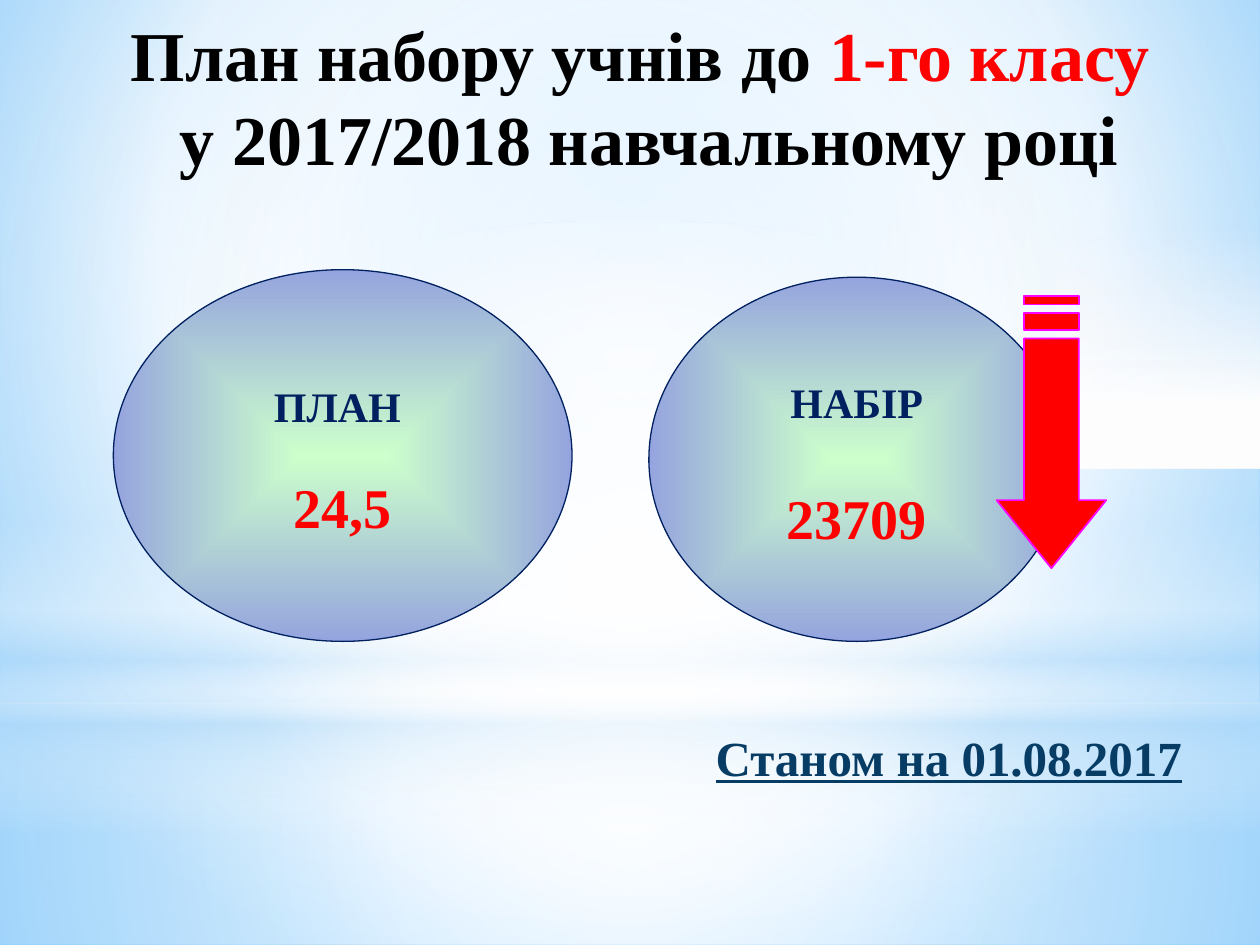
from dataclasses import dataclass

from lxml.etree import SubElement
from pptx import Presentation
from pptx.dml.color import RGBColor
from pptx.enum.shapes import MSO_SHAPE
from pptx.enum.text import MSO_ANCHOR, PP_ALIGN
from pptx.oxml.ns import qn
from pptx.util import Inches, Pt


@dataclass(frozen=True)
class Theme:
    font: str = "Times New Roman"
    black: str = "000000"
    red: str = "FF0000"
    magenta: str = "FF00FF"
    navy: str = "002060"
    date_blue: str = "073C65"
    white: str = "FFFFFF"
    pale_blue: str = "B4DCFA"
    sky: str = "9ED5FF"
    deep_sky: str = "5BB9FF"
    mist: str = "F6F7FC"
    mint: str = "CCFFCC"
    lavender: str = "95A4DE"
    title_size: int = 40
    value_size: int = 32
    date_size: int = 28
    label_size: int = 24


THEME = Theme()
CENTRE = (50, 50, 50, 50)


def set_gradient(fill, properties, stops, kind=None, focus=CENTRE):
    """Stops are (position, colour, opacity) in percent; no kind means a vertical blend."""
    fill.solid()
    gradient = properties.makeelement(qn("a:gradFill"), {"rotWithShape": "1"})
    stop_list = SubElement(gradient, qn("a:gsLst"))
    for position, color, opacity in stops:
        stop = SubElement(stop_list, qn("a:gs"), pos=str(position * 1000))
        tint = SubElement(stop, qn("a:srgbClr"), val=color)
        if opacity < 100:
            SubElement(tint, qn("a:alpha"), val=str(opacity * 1000))
    if kind:
        blend = SubElement(gradient, qn("a:path"), path=kind)
        edges = {side: str(share * 1000) for side, share in zip("ltrb", focus)}
        SubElement(blend, qn("a:fillToRect"), **edges)
    else:
        SubElement(gradient, qn("a:lin"), ang="5400000", scaled="0")
    properties.replace(properties.find(qn("a:solidFill")), gradient)


def set_line(shape, color, width):
    shape.line.color.rgb = RGBColor.from_string(color)
    shape.line.width = Pt(width)


def add_gradient_shape(slide, preset, box, stops, kind=None):
    shape = slide.shapes.add_shape(preset, *map(Inches, box))
    shape.shadow.inherit = False
    shape.line.fill.background()
    set_gradient(shape.fill, shape.element.spPr, stops, kind)
    return shape


def add_run(paragraph, text, *, size, color, underline=False):
    run = paragraph.add_run()
    run.text = text
    run.font.name = THEME.font
    run.font.size = Pt(size)
    run.font.bold = True
    run.font.underline = underline
    run.font.color.rgb = RGBColor.from_string(color)


def add_text_box(slide, box, margin_left=0.1):
    frame = slide.shapes.add_textbox(*map(Inches, box)).text_frame
    frame.word_wrap = True
    frame.margin_top = Inches(0.09)
    frame.margin_left = Inches(margin_left)
    return frame.paragraphs[0]


def add_background(slide):
    fill = slide.background.fill
    fill.solid()
    stops = [(0, THEME.sky, 100), (60, THEME.white, 100), (100, THEME.deep_sky, 100)]
    set_gradient(fill, slide.element.cSld.bg.bgPr, stops, "circle", (20, 10, 20, 60))


def add_glow(slide):
    """Soft light layers over the background, from back to front."""
    white, blue = THEME.white, THEME.pale_blue
    rectangle, oval = MSO_SHAPE.RECTANGLE, MSO_SHAPE.OVAL
    layers = [
        (rectangle, (0, 5.58, 10, 1.92),
         [(0, white, 91), (37, white, 76), (100, blue, 79)], "circle"),
        (rectangle, (0, 0, 10, 5.58),
         [(0, white, 89), (48, white, 62), (100, blue, 79)], "circle"),
        (rectangle, (0, 4.12, 10, 2.5),
         [(0, white, 0), (29, white, 30), (45, blue, 40),
          (55, white, 26), (65, blue, 60), (100, white, 0)], None),
        (oval, (0, 1.75, 10, 5.58), [(0, white, 100), (56, white, 0)], "circle"),
        (rectangle, (8.38, 1.8, 1.62, 1.92),
         [(0, THEME.mist, 0), (74, white, 100), (100, white, 100)], None),
    ]
    for layer in layers:
        add_gradient_shape(slide, *layer)


def add_title(slide, box):
    paragraph = add_text_box(slide, box)
    paragraph.alignment = PP_ALIGN.CENTER
    paragraph.line_spacing = Pt(48)
    size = THEME.title_size
    add_run(paragraph, "План набору учнів до ", size=size, color=THEME.black)
    add_run(paragraph, "1-го класу", size=size, color=THEME.red)
    paragraph.add_line_break()
    add_run(paragraph, " у 2017/2018 навчальному році", size=size, color=THEME.black)


def add_date(slide, box):
    paragraph = add_text_box(slide, box, margin_left=0.15)
    add_run(paragraph, "Станом на 01.08.2017", size=THEME.date_size,
            color=THEME.date_blue, underline=True)


def add_figure(slide, box, label, value, gap):
    """Oval with a label and, after a gap in points, its value."""
    stops = [(0, THEME.mint, 100), (100, THEME.lavender, 100)]
    oval = add_gradient_shape(slide, MSO_SHAPE.OVAL, box, stops, "shape")
    set_line(oval, THEME.navy, 0.75)
    frame = oval.text_frame
    frame.word_wrap = False
    frame.vertical_anchor = MSO_ANCHOR.MIDDLE
    frame.margin_top = Inches(0.12)
    heading, number = frame.paragraphs[0], frame.add_paragraph()
    heading.alignment = number.alignment = PP_ALIGN.CENTER
    number.space_before = Pt(gap)
    add_run(heading, label, size=THEME.label_size, color=THEME.navy)
    add_run(number, value, size=THEME.value_size, color=THEME.red)


def add_striped_arrow(slide, box):
    """Downward arrow with two stripes above its shaft."""
    left, top, width, height = box
    shaft_left, shaft_right = width / 4, width * 3 / 4
    unit = height / 32
    shoulder = height * 3 / 4

    def bar(start, end):
        return [(shaft_left, start), (shaft_right, start),
                (shaft_right, end), (shaft_left, end)]

    head = [(0, shoulder), (shaft_left, shoulder), (shaft_left, 5 * unit),
            (shaft_right, 5 * unit), (shaft_right, shoulder),
            (width, shoulder), (width / 2, height)]
    outlines = [[(Inches(left + x), Inches(top + y)) for x, y in points]
                for points in (head, bar(2 * unit, 4 * unit), bar(0, unit))]
    builder = slide.shapes.build_freeform(*outlines[0][0])
    for index, points in enumerate(outlines):
        if index:
            builder.move_to(*points[0])
        builder.add_line_segments(points[1:], close=True)
    arrow = builder.convert_to_shape()
    arrow.shadow.inherit = False
    arrow.fill.solid()
    arrow.fill.fore_color.rgb = RGBColor.from_string(THEME.red)
    set_line(arrow, THEME.magenta, 1)


def main():
    presentation = Presentation()
    presentation.slide_width = Inches(10)
    presentation.slide_height = Inches(7.5)
    slide = presentation.slides.add_slide(presentation.slide_layouts[6])
    add_background(slide)
    add_glow(slide)
    add_title(slide, (0.4, 0, 9.36, 1.68))
    add_date(slide, (5.53, 5.68, 4.04, 1.32))
    add_figure(slide, (0.9, 2.14, 3.64, 2.95), "ПЛАН ", "24,5", gap=24)
    add_figure(slide, (5.15, 2.2, 3.3, 2.89), "НАБІР", "23709", gap=32)
    add_striped_arrow(slide, (7.91, 2.35, 0.87, 2.16))
    presentation.save("out.pptx")


if __name__ == "__main__":
    main()
